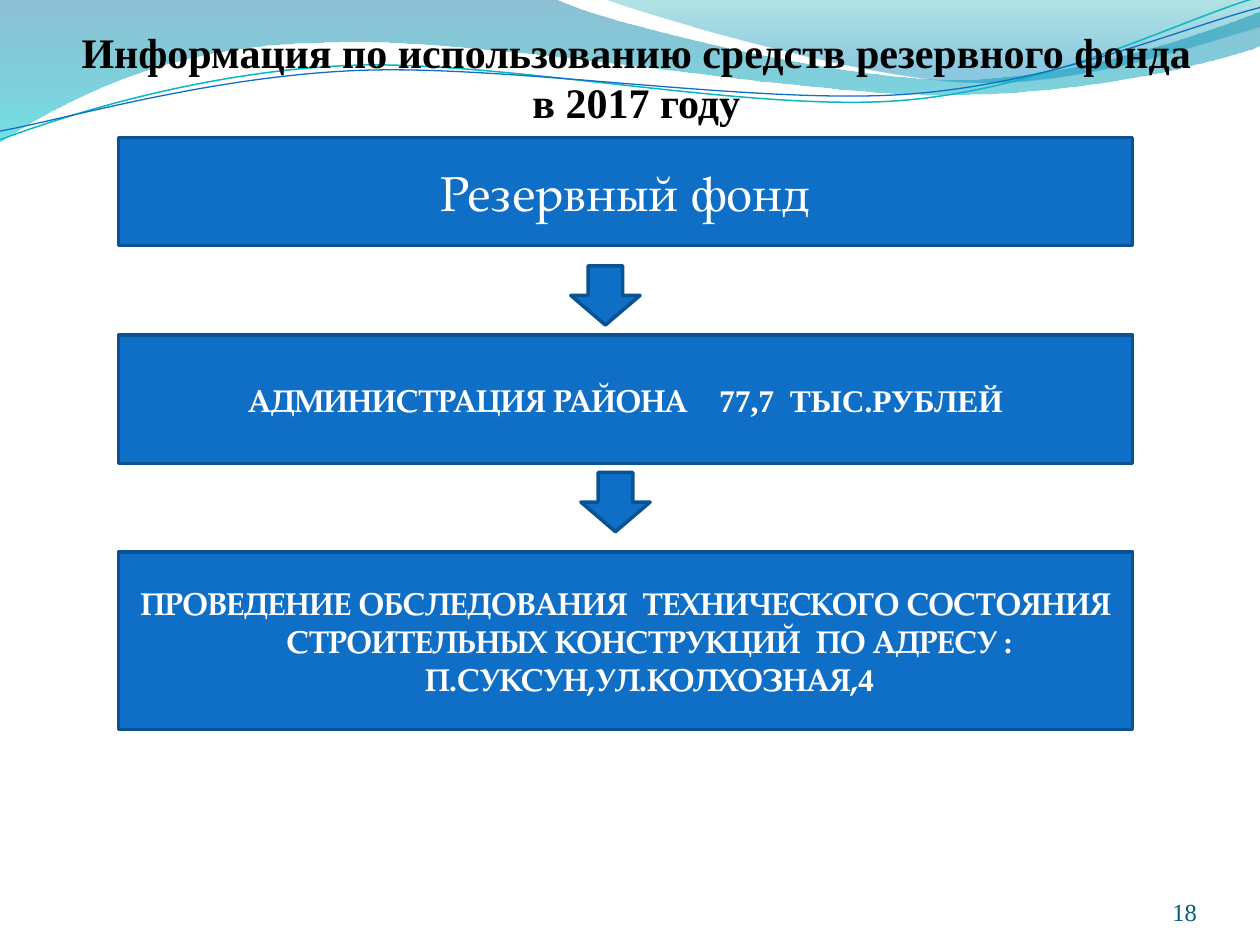
from lxml import etree
from pptx import Presentation
from pptx.dml.color import RGBColor
from pptx.enum.shapes import MSO_SHAPE
from pptx.enum.text import MSO_ANCHOR, PP_ALIGN
from pptx.oxml.ns import qn
from pptx.util import Inches, Pt

BLUE = RGBColor(0x0F, 0x6F, 0xC6)
NAVY = RGBColor(0x0B, 0x52, 0x92)
TEAL = RGBColor(0x0A, 0xB8, 0xBF)
DEEP_TEAL = RGBColor(0x00, 0x74, 0xA1)
AQUA = RGBColor(0x00, 0xC6, 0xCF)
SEA = RGBColor(0x00, 0xA1, 0xA9)
SKY = RGBColor(0x00, 0x8B, 0xBF)
PETROL = RGBColor(0x04, 0x5D, 0x75)
WHITE = RGBColor(0xFF, 0xFF, 0xFF)
BLACK = RGBColor(0, 0, 0)
SERIF = "Times New Roman"
PAGELLA = "TeX Gyre Pagella"

LARGE_WAVE = [(0, -0.01), (4.4, -0.01), (4.76, 0.17, 6.64, 0.63, 7.58, 0.63),
              (8.53, 0.63, 9.58, 0.26, 10, 0.09), (10.01, 0.36),
              (9.83, 0.44, 8.7, 0.76, 7.46, 0.75), (6.22, 0.75, 3.82, 0.28, 2.57, 0.34),
              (1.29, 0.35, 0.46, 0.83, -0.01, 1.13), (0, -0.01)]
SMALL_WAVE = [(4.79, -0.01), (5.09, 0.11, 6.82, 0.62, 7.69, 0.65),
              (8.56, 0.69, 9.61, 0.32, 10, 0.21), (10, 0), (4.79, -0.01)]
TEAL_STRAND = [(0, 1.11), (0.48, 0.93, 1.58, 0.57, 2.77, 0.52),
               (3.95, 0.47, 5.93, 0.89, 7.13, 0.8), (8.33, 0.71, 9.38, 0.15, 9.98, -0.02)]
BLUE_STRAND = [(0, 1.04), (0.47, 0.96, 1.64, 0.61, 2.83, 0.56),
               (4.03, 0.51, 5.97, 0.83, 7.17, 0.75), (8.36, 0.67, 9.41, 0.21, 10, 0.06)]


def add_outline(slide, outline, closed):
    """Draw an outline of straight and Bezier segments given in inches."""
    ends = [(Inches(segment[-2]), Inches(segment[-1])) for segment in outline]
    builder = slide.shapes.build_freeform(*ends[0])
    builder.add_line_segments(ends[1:], close=closed)
    shape = builder.convert_to_shape()
    shape.shadow.inherit = False
    straights = list(shape.element.spPr.iter(qn("a:lnTo")))
    for straight, segment in zip(straights, outline[1:]):
        if len(segment) == 2:
            continue
        curve = etree.Element(qn("a:cubicBezTo"))
        for x, y in zip(segment[::2], segment[1::2]):
            point = etree.SubElement(curve, qn("a:pt"))
            point.set("x", str(Inches(x) - shape.left))
            point.set("y", str(Inches(y) - shape.top))
        straight.getparent().replace(straight, curve)
    return shape


def add_wave(slide, outline, stops):
    """Draw a translucent wave shaded from top to bottom."""
    wave = add_outline(slide, outline, True)
    wave.line.fill.background()
    wave.fill.gradient()
    wave.fill.gradient_angle = 270
    for stop, (position, color, _) in zip(wave.fill.gradient_stops, stops):
        stop.position = position
        stop.color.rgb = color
    for tint, (_, _, opacity) in zip(wave.element.spPr.iter(qn("a:srgbClr")), stops):
        etree.SubElement(tint, qn("a:alpha")).set("val", str(opacity * 1000))


def add_strand(slide, outline, color, width):
    """Draw a thin curved line."""
    strand = add_outline(slide, outline, False)
    strand.fill.background()
    strand.line.color.rgb = color
    strand.line.width = Pt(width)


def add_run(paragraph, text, font, size, color, bold=False):
    """Append one formatted run."""
    run = paragraph.add_run()
    run.text = text
    run.font.name = font
    run.font.size = Pt(size)
    run.font.bold = bold
    run.font.color.rgb = color
    return run


def add_detail(paragraph, text, font=PAGELLA):
    """Append a bold white run of block text."""
    return add_run(paragraph, text, font, 18, WHITE, True)


def add_gap(paragraph, extra, font=PAGELLA):
    """Append a space widened by some points."""
    add_detail(paragraph, " ", font).font._element.set("spc", str(int(extra * 100)))


def add_label(slide, box, align, top_inset=0):
    """Place a bottom-anchored text box and return its paragraph."""
    frame = slide.shapes.add_textbox(*map(Inches, box)).text_frame
    frame.word_wrap = True
    frame.vertical_anchor = MSO_ANCHOR.BOTTOM
    frame.margin_left = frame.margin_right = frame.margin_bottom = 0
    frame.margin_top = Inches(top_inset)
    paragraph = frame.paragraphs[0]
    paragraph.alignment = align
    return paragraph


def add_block(slide, kind, box):
    """Place a blue outlined shape and return its centred paragraph."""
    block = slide.shapes.add_shape(kind, *map(Inches, box))
    block.shadow.inherit = False
    block.fill.solid()
    block.fill.fore_color.rgb = BLUE
    block.line.color.rgb = NAVY
    block.line.width = Pt(2)
    block.text_frame.word_wrap = True
    block.text_frame.vertical_anchor = MSO_ANCHOR.MIDDLE
    paragraph = block.text_frame.paragraphs[0]
    paragraph.alignment = PP_ALIGN.CENTER
    return paragraph


def hang(paragraph):
    """Give a paragraph a hanging indent."""
    properties = paragraph._p.get_or_add_pPr()
    properties.set("marL", str(Inches(0.38)))
    properties.set("indent", str(-Inches(0.38)))


def add_background(slide):
    """Draw the waves and strands along the top."""
    add_wave(slide, LARGE_WAVE, [(0, DEEP_TEAL, 45), (1, AQUA, 55)])
    add_wave(slide, SMALL_WAVE, [(0, SEA, 30), (0.8, SKY, 45)])
    add_strand(slide, TEAL_STRAND, TEAL, 0.85)
    add_strand(slide, BLUE_STRAND, BLUE, 0.75)


def add_fund_flow(slide, left, width):
    """Stack the fund, its recipient and its purpose, joined by arrows."""
    fund = add_block(slide, MSO_SHAPE.RECTANGLE, (left, 1.09, width, 0.86))
    add_run(fund, "Резервный фонд", PAGELLA, 28, WHITE)
    add_arrow(slide, 4.53, 2.11)

    recipient = add_block(slide, MSO_SHAPE.RECTANGLE, (left, 2.66, width, 1.02))
    hang(recipient)
    add_detail(recipient, "АДМИНИСТРАЦИЯ РАЙОНА")
    add_gap(recipient, 13.5)
    add_detail(recipient, "77,7", SERIF)
    add_gap(recipient, 4.5, SERIF)
    add_detail(recipient, "ТЫС.РУБЛЕЙ", SERIF)

    purpose = add_block(slide, MSO_SHAPE.RECTANGLE, (left, 4.38, width, 1.41))
    hang(purpose)
    add_detail(purpose, "ПРОВЕДЕНИЕ ОБСЛЕДОВАНИЯ")
    add_gap(purpose, 4.5)
    add_detail(purpose, "ТЕХНИЧЕСКОГО СОСТОЯНИЯ СТРОИТЕЛЬНЫХ КОНСТРУКЦИЙ")
    add_gap(purpose, 4.5)
    add_detail(purpose, "ПО АДРЕСУ : П.СУКСУН,УЛ.КОЛХОЗНАЯ,")
    add_detail(purpose, "4", SERIF)
    add_arrow(slide, 4.61, 3.75)


def add_arrow(slide, left, top):
    """Place a downward arrow between two blocks."""
    add_block(slide, MSO_SHAPE.DOWN_ARROW, (left, top, 0.55, 0.47))


def main():
    """Build and save the slide."""
    deck = Presentation()
    deck.slide_width, deck.slide_height = Inches(10), Inches(7.5)
    slide = deck.slides.add_slide(deck.slide_layouts[6])
    add_background(slide)
    title = add_label(slide, (0.55, 0.23, 9, 0.78), PP_ALIGN.CENTER, 0.05)
    add_run(title, "Информация по использованию средств резервного фонда в 2017 году",
            SERIF, 24, BLACK, True)
    page_number = add_label(slide, (7.17, 6.83, 2.33, 0.52), PP_ALIGN.RIGHT)
    add_run(page_number, "18", SERIF, 14, PETROL)
    add_fund_flow(slide, 0.94, 8.05)
    deck.save("out.pptx")


if __name__ == "__main__":
    main()
